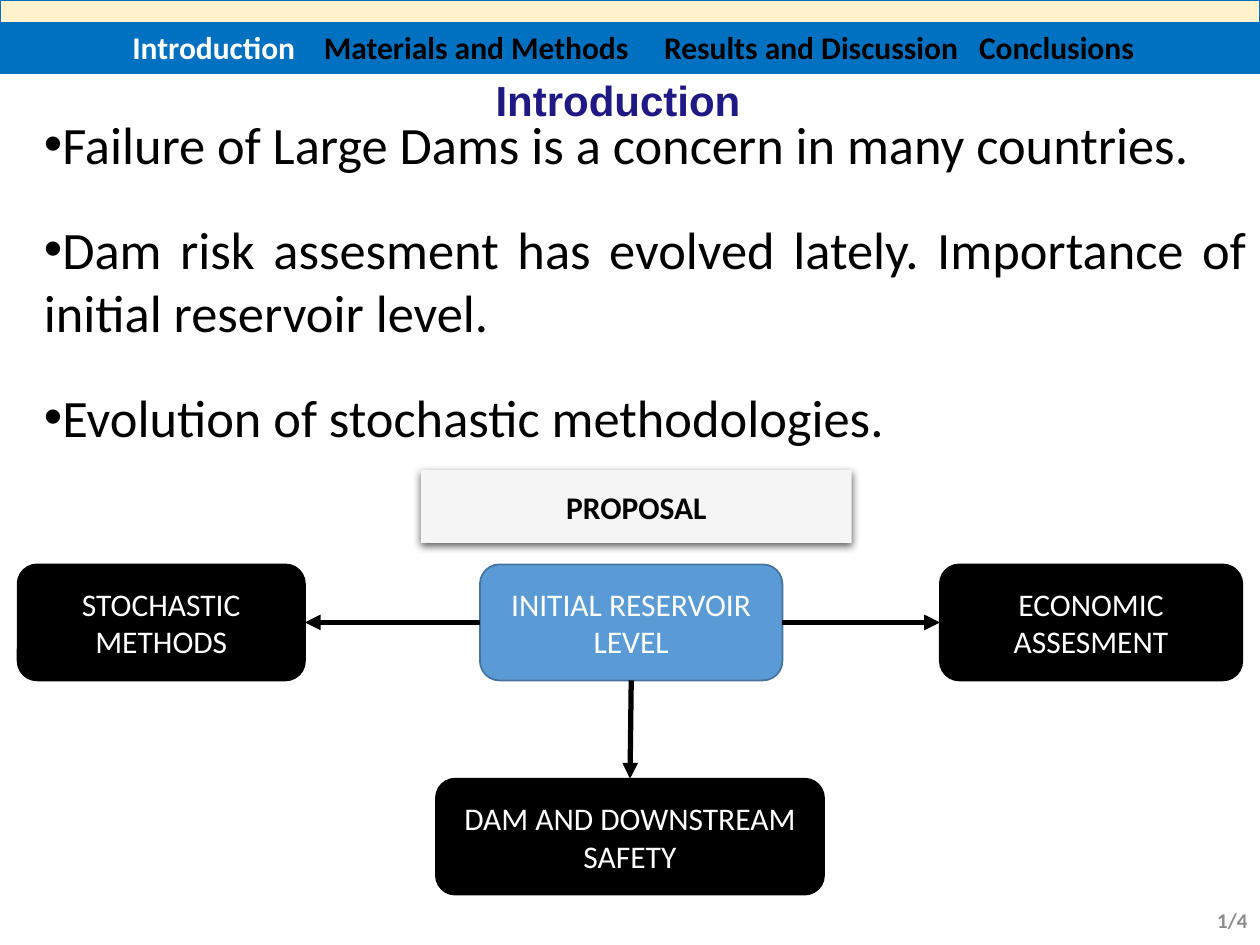
from dataclasses import dataclass

from lxml import etree
from pptx import Presentation
from pptx.dml import color
from pptx.enum import shapes, text
from pptx.oxml import ns
from pptx import util as u

COLUMNS, ROWS = 100, 75
CENTER, LEFT, RIGHT, JUSTIFY = (text.PP_ALIGN.CENTER, text.PP_ALIGN.LEFT,
                                text.PP_ALIGN.RIGHT, text.PP_ALIGN.JUSTIFY)
TOP, MIDDLE = text.MSO_ANCHOR.TOP, text.MSO_ANCHOR.MIDDLE
RECT = shapes.MSO_SHAPE.RECTANGLE
ROUNDED = shapes.MSO_SHAPE.ROUNDED_RECTANGLE
BLACK, WHITE, BLUE = "000000", "FFFFFF", "0070C0"

deck = Presentation()
deck.slide_width, deck.slide_height = u.Inches(10), u.Inches(7.5)
page = deck.slides.add_slide(deck.slide_layouts[5])


@dataclass
class Area:
    column: float
    row: float
    columns: float
    rows: float

    def lengths(self) -> tuple:
        return (across(self.column), down(self.row),
                across(self.columns), down(self.rows))


@dataclass
class Style:
    size: float
    hue: str = BLACK
    bold: bool = False
    font: str = "Calibri"


@dataclass
class Node:
    label: str
    area: Area
    fill: str = BLACK
    line: str = BLACK


def across(columns: float) -> int:
    return round(deck.slide_width * columns / COLUMNS)


def down(rows: float) -> int:
    return round(deck.slide_height * rows / ROWS)


def rgb(value: str) -> color.RGBColor:
    return color.RGBColor.from_string(value)


def add_span(para, words: str, style: Style) -> None:
    span = para.add_run()
    span.text = words
    span.font.size = u.Pt(style.size)
    span.font.name = style.font
    span.font.bold = style.bold
    span.font.color.rgb = rgb(style.hue)


def set_frame(box, anchor, align):
    frame = box.text_frame
    frame.word_wrap = True
    frame.auto_size = text.MSO_AUTO_SIZE.NONE
    frame.vertical_anchor = anchor
    frame.paragraphs[0].alignment = align
    return frame


def add_text_box(area: Area, anchor, align):
    return set_frame(page.shapes.add_textbox(*area.lengths()), anchor, align)


def add_block(area: Area, kind, fill: str, line: str = "", width: float = 1):
    block = page.shapes.add_shape(kind, *area.lengths())
    block.shadow.inherit = False
    block.fill.solid()
    block.fill.fore_color.rgb = rgb(fill)
    if line:
        block.line.color.rgb = rgb(line)
        block.line.width = u.Pt(width)
    else:
        block.line.fill.background()
    return block


def add_label(block, words: str, style: Style) -> None:
    frame = set_frame(block, MIDDLE, CENTER)
    add_span(frame.paragraphs[0], words, style)


def add_node(node: Node):
    block = add_block(node.area, ROUNDED, node.fill, node.line)
    add_label(block, node.label, Style(18, WHITE))
    return block


def add_arrow(start, start_side: int, end, end_side: int) -> None:
    arrow = page.shapes.add_connector(shapes.MSO_CONNECTOR.STRAIGHT, 0, 0, 0, 0)
    arrow.begin_connect(start, start_side)
    arrow.end_connect(end, end_side)
    arrow.line.color.rgb = rgb(BLACK)
    arrow.line.width = u.Pt(3)
    line = arrow.line._get_or_add_ln()
    etree.SubElement(line, ns.qn("a:tailEnd"), type="triangle")
    etree.SubElement(arrow._element.spPr, ns.qn("a:effectLst"))


def add_shadow(block) -> None:
    effects = block._element.spPr.find(ns.qn("a:effectLst"))
    shadow = etree.SubElement(
        effects, ns.qn("a:outerShdw"), blurRad=str(u.Pt(4.5)),
        dist=str(u.Pt(1.5)), dir="5400000", algn="ctr", rotWithShape="0")
    hue = etree.SubElement(shadow, ns.qn("a:srgbClr"), val=BLACK)
    etree.SubElement(hue, ns.qn("a:alpha"), val="63000")


def add_navigation() -> None:
    first = 10.5
    sections = [("Introduction", first), ("Materials and Methods", 25.7),
                ("Results and Discussion", 52.7), ("Conclusions", 77.7)]
    frame = add_text_box(Area(first, 1.7, COLUMNS - first, 4), TOP, LEFT)
    frame.margin_left = 0
    para = frame.paragraphs[0]
    tabs = etree.SubElement(para._p.get_or_add_pPr(), ns.qn("a:tabLst"))
    for index, (name, column) in enumerate(sections):
        if index:
            etree.SubElement(tabs, ns.qn("a:tab"), algn="l",
                             pos=str(across(column - first)))
        add_span(para, ("\t" if index else "") + name,
                 Style(18, BLACK if index else WHITE, True))


def add_bullets(area: Area, lines: list[str]) -> None:
    frame = add_text_box(area, TOP, JUSTIFY)
    for index, words in enumerate(lines):
        para = frame.add_paragraph() if index else frame.paragraphs[0]
        para.alignment = JUSTIFY
        para.space_before = u.Pt(24 if index else 0)
        properties = para._p.get_or_add_pPr()
        properties.set("marL", "0")
        properties.set("indent", "0")
        etree.SubElement(properties, ns.qn("a:buFont"), typeface="Arial")
        etree.SubElement(properties, ns.qn("a:buChar"), char="•")
        add_span(para, words, Style(30))


for row, fill in ((0, "FFF2CC"), (1.8, BLUE)):
    add_block(Area(0, row, COLUMNS, 4), RECT, fill, BLUE, 0)

title = page.shapes.title
title.left, title.top, title.width, title.height = Area(0, 5.8, 98.1, 4.2).lengths()
add_label(title, "Introduction", Style(24, "201884", True, "Arial"))

add_navigation()
add_bullets(Area(2.5, 8.4, 97.5, 36), [
    "Failure of Large Dams is a concern in many countries.",
    "Dam risk assesment has evolved lately. Importance of initial reservoir level.",
    "Evolution of stochastic methodologies.",
])

number = add_text_box(Area(71.7, 71, 28.3, 4), MIDDLE, RIGHT)
add_span(number.paragraphs[0], "1/4", Style(12, "8C8C8C", True))

proposal = add_block(Area(33.4, 37.3, 34.2, 5.8), RECT, "F5F5F5")
add_shadow(proposal)
add_label(proposal, "PROPOSAL", Style(18, BLACK, True))

NODE_ROW, NODE_ROWS = 44.8, 9.2
economic, stochastic, safety, level = [add_node(node) for node in (
    Node("ECONOMIC ASSESMENT", Area(74.6, NODE_ROW, 24, NODE_ROWS)),
    Node("STOCHASTIC METHODS", Area(1.4, NODE_ROW, 22.8, NODE_ROWS)),
    Node("DAM AND DOWNSTREAM SAFETY", Area(34.6, 61.8, 30.8, NODE_ROWS)),
    Node("INITIAL RESERVOIR LEVEL", Area(38.1, NODE_ROW, 24, NODE_ROWS),
         "5B9BD5", "43739E"),
)]
for start_side, target, end_side in ((1, stochastic, 3), (3, economic, 1), (2, safety, 0)):
    add_arrow(level, start_side, target, end_side)

deck.save("out.pptx")
